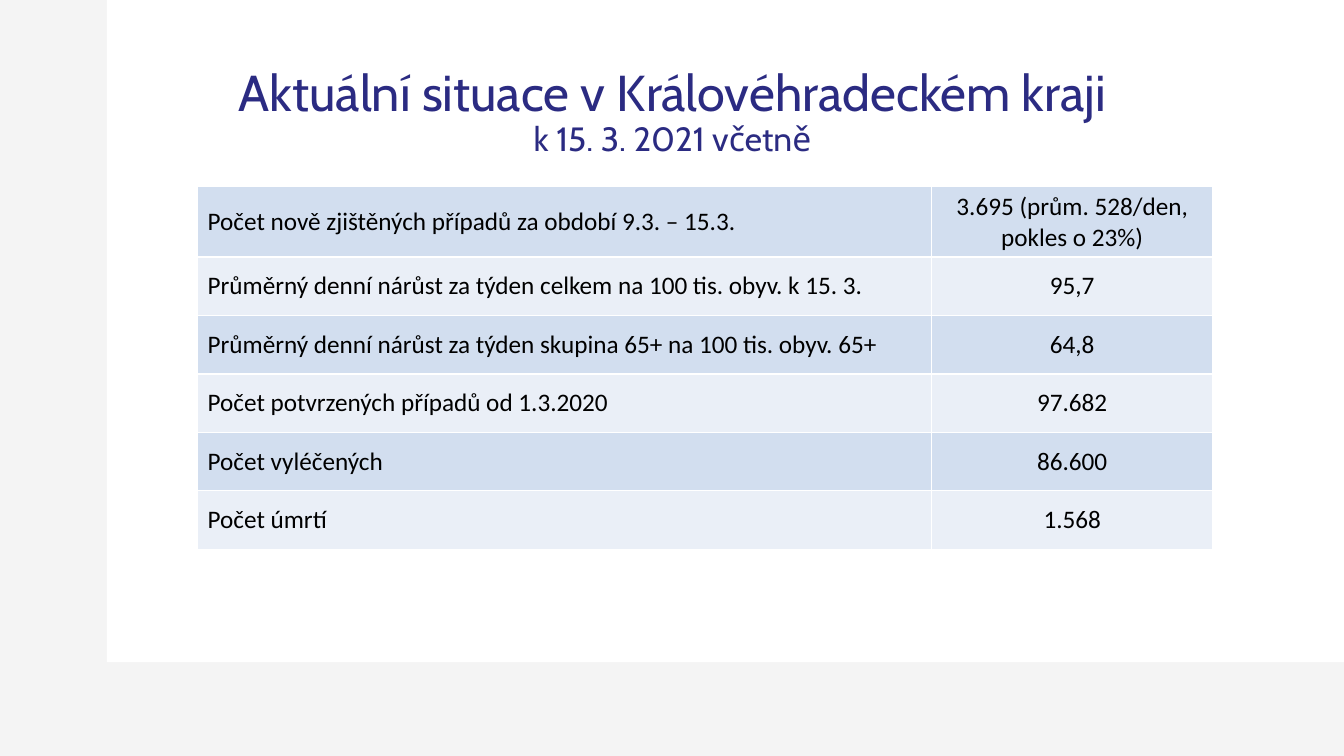
from lxml import etree
from pptx import Presentation
from pptx.dml.color import RGBColor
from pptx.enum.shapes import MSO_SHAPE
from pptx.enum.text import MSO_ANCHOR, PP_ALIGN
from pptx.oxml.ns import qn
from pptx.util import Inches, Pt

BACKGROUND, WHITE, BLACK, NAVY = "F4F4F4", "FFFFFF", "000000", "2B2B82"
BAND_COLORS = ("D2DEEF", "EAEFF7")
COLUMN_WIDTHS = (7.28, 2.79)
ROW_HEIGHT = 0.58
SITUATION = [
    ("Počet nově zjištěných případů za období 9.3. – 15.3.",
     "3.695 (prům. 528/den, pokles o 23%)"),
    ("Průměrný denní nárůst za týden celkem na 100 tis. obyv. k 15. 3.", "95,7"),
    ("Průměrný denní nárůst za týden skupina 65+ na 100 tis. obyv. 65+", "64,8"),
    ("Počet potvrzených případů od 1.3.2020", "97.682"),
    ("Počet vyléčených", "86.600"),
    ("Počet úmrtí", "1.568"),
]


def paint(fill, color):
    fill.solid()
    fill.fore_color.rgb = RGBColor.from_string(color)


def add_text(paragraph, text, font="Calibri", size=18, color=BLACK,
             align=PP_ALIGN.LEFT):
    paragraph.alignment = align
    run = paragraph.add_run()
    run.text = text
    run.font.name = font
    run.font.size = Pt(size)
    run.font.color.rgb = RGBColor.from_string(color)


def add_panel(slide, left, top, width, height):
    panel = slide.shapes.add_shape(MSO_SHAPE.RECTANGLE, Inches(left), Inches(top),
                                   Inches(width), Inches(height))
    panel.shadow.inherit = False
    paint(panel.fill, WHITE)
    panel.line.fill.background()


def add_title(slide, title, subtitle):
    box = slide.shapes.add_textbox(Inches(0.92), Inches(0.4), Inches(11.5), Inches(1.45))
    frame = box.text_frame
    frame.word_wrap = True
    frame.vertical_anchor = MSO_ANCHOR.MIDDLE
    paragraph = frame.paragraphs[0]
    paragraph.line_spacing = 0.9
    style = dict(font="Cabin", color=NAVY, align=PP_ALIGN.CENTER)
    add_text(paragraph, title, size=36, **style)
    paragraph.add_line_break()
    add_text(paragraph, subtitle, size=24, **style)


def add_borders(cell, color, width):
    properties = cell._tc.get_or_add_tcPr()
    for position, side in enumerate(("a:lnL", "a:lnR", "a:lnT", "a:lnB")):
        line = etree.Element(qn(side), w=str(Pt(width)))
        fill = etree.SubElement(line, qn("a:solidFill"))
        etree.SubElement(fill, qn("a:srgbClr"), val=color)
        properties.insert(position, line)


def add_situation_table(slide, left, top):
    frame = slide.shapes.add_table(
        len(SITUATION), len(COLUMN_WIDTHS), Inches(left), Inches(top),
        Inches(sum(COLUMN_WIDTHS)), Inches(ROW_HEIGHT * len(SITUATION)))
    table = frame.table
    table.first_row = False
    table.horz_banding = False
    for column, width in zip(table.columns, COLUMN_WIDTHS):
        column.width = Inches(width)
    for row_index, texts in enumerate(SITUATION):
        table.rows[row_index].height = Inches(ROW_HEIGHT)
        for column_index, text in enumerate(texts):
            cell = table.cell(row_index, column_index)
            cell.vertical_anchor = MSO_ANCHOR.MIDDLE
            paint(cell.fill, BAND_COLORS[row_index % 2])
            add_borders(cell, WHITE, 1)
            add_text(cell.text_frame.paragraphs[0], text,
                     align=PP_ALIGN.CENTER if column_index else PP_ALIGN.LEFT)


def main():
    presentation = Presentation()
    presentation.slide_width = Inches(13.33)
    presentation.slide_height = Inches(7.5)
    slide = presentation.slides.add_slide(presentation.slide_layouts[6])

    # Grey backdrop with a white panel
    paint(slide.background.fill, BACKGROUND)
    add_panel(slide, 1.06, 0, 12.27, 6.57)

    # Heading and figures
    add_title(slide, "Aktuální situace v Královéhradeckém kraji",
              "k 15. 3. 2021 včetně")
    add_situation_table(slide, 1.96, 1.85)

    presentation.save("out.pptx")


if __name__ == "__main__":
    main()
